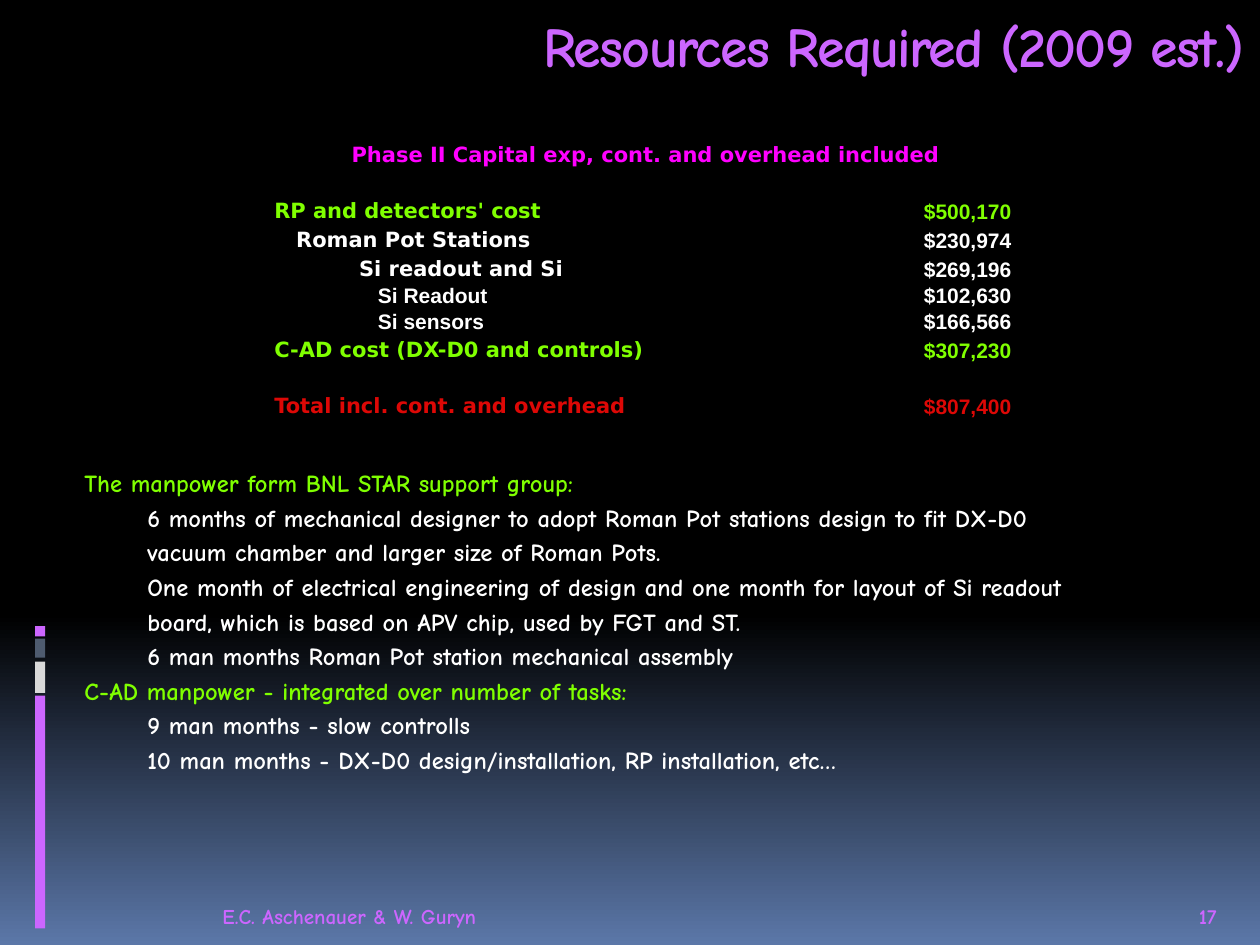
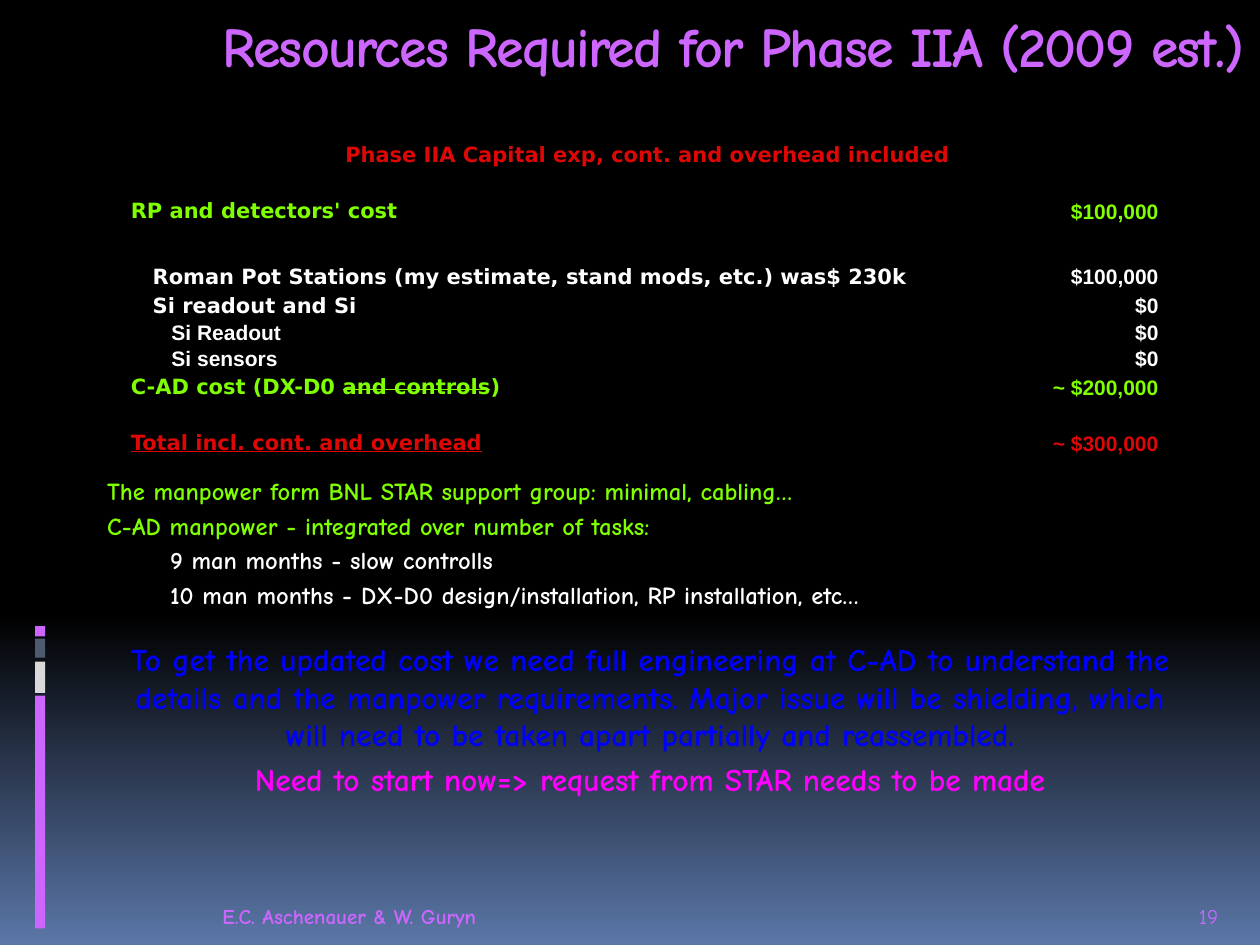
from dataclasses import dataclass
from typing import NamedTuple

from lxml.etree import SubElement
from pptx import Presentation
from pptx.dml.color import RGBColor
from pptx.enum.shapes import MSO_SHAPE
from pptx.enum.text import MSO_ANCHOR, MSO_AUTO_SIZE, PP_ALIGN
from pptx.oxml.ns import qn
from pptx.util import Pt


@dataclass(frozen=True)
class Theme:
    black: str = "000000"
    white: str = "FFFFFF"
    sky: str = "5B77A8"
    violet: str = "CC66FF"
    silver: str = "D9D9D9"
    slate: str = "4E5B6F"
    green: str = "80FF00"
    red: str = "DD0806"
    magenta: str = "FF00FF"
    blue: str = "0000FF"
    text_font: str = "Comic Neue"
    label_font: str = "DejaVu Sans"
    value_font: str = "Arial"
    title_size: float = 32
    message_size: float = 18
    list_size: float = 14
    small_size: float = 12
    paragraph_gap: float = 0.21


class CostRow(NamedTuple):
    label: str
    value: str
    color: str
    inset: float = 0.75
    height: float = 16.5
    font: str = Theme.label_font
    struck: str = ""
    ending: str = ""
    underline: bool = False


THEME = Theme()
NO_GRID_STYLE = "{2D5ABB26-0587-4C30-8999-92F81FD0307C}"
FOOTER = "E.C. Aschenauer & W. Guryn"
HEADER_HEIGHT = 18
THIN_ROW = 15
SPACER = CostRow("", "", THEME.white, height=THIN_ROW)
CONTROL_TASKS = [
    ("C-AD manpower - integrated over number of tasks:", 0),
    ("9 man months - slow controlls", 1),
    ("10 man months - DX-D0 design/installation, RP installation, etc…", 1),
]


def add_span(para, text, *, size, color, font=THEME.text_font, bold=True,
             underline=None, strike=False, spacing=None):
    span = para.add_run()
    span.text = text
    span.font.size = Pt(size)
    span.font.name = font
    span.font.bold = bold
    span.font.underline = underline
    span.font.color.rgb = RGBColor.from_string(color)
    properties = span._r.get_or_add_rPr()
    if strike:
        properties.set("strike", "sngStrike")
    if spacing is not None:
        properties.set("spc", str(spacing))
    return span


class SlideBuilder:
    def __init__(self, deck, theme):
        self.deck = deck
        self.theme = theme
        self.page = None

    def paint_background(self):
        fill = self.deck.slide_master.background.fill
        fill.gradient()
        fill.gradient_angle = 270
        colors = (self.theme.black, self.theme.sky)
        for stop, position, color in zip(fill.gradient_stops, (0.65, 1), colors):
            stop.position = position
            stop.color.rgb = RGBColor.from_string(color)

    def add_page(self, title, title_left, number, number_bold):
        self.page = self.deck.slides.add_slide(self.deck.slide_layouts[1])
        self.add_side_bars()
        self.add_title(title, title_left)
        self.add_footer(FOOTER, 120, 408)
        self.add_footer(number, 678, 36, number_bold)

    def add_side_bars(self):
        theme = self.theme
        bars = (
            (357.8, 5.8, theme.violet),
            (365, 10.8, theme.slate),
            (378, 18, theme.silver),
            (397.5, 133, theme.violet),
        )
        for top, height, color in bars:
            bar = self.page.shapes.add_shape(
                MSO_SHAPE.RECTANGLE, Pt(20), Pt(top), Pt(5.8), Pt(height))
            bar.shadow.inherit = False
            bar.fill.solid()
            bar.fill.fore_color.rgb = RGBColor.from_string(color)
            bar.line.fill.background()

    def prepare_frame(self, box, left, top, width, height, anchor):
        box.left, box.top = Pt(left), Pt(top)
        box.width, box.height = Pt(width), Pt(height)
        frame = box.text_frame
        frame.word_wrap = True
        frame.auto_size = MSO_AUTO_SIZE.NONE
        frame.vertical_anchor = anchor
        return frame

    def add_text_box(self, left, top, width, height, anchor):
        box = self.page.shapes.add_textbox(0, 0, 0, 0)
        return self.prepare_frame(box, left, top, width, height, anchor)

    def add_title(self, text, left):
        frame = self.prepare_frame(
            self.page.shapes.title, left, 2, 718 - left, 48, MSO_ANCHOR.MIDDLE)
        para = frame.paragraphs[0]
        para.alignment = PP_ALIGN.RIGHT
        add_span(para, text, size=self.theme.title_size,
                 color=self.theme.violet, spacing=-100)

    def add_footer(self, text, left, width, bold=True):
        frame = self.add_text_box(left, 505.5, width, 29, MSO_ANCHOR.BOTTOM)
        add_span(frame.paragraphs[0], text, size=self.theme.small_size,
                 color=self.theme.violet, bold=bold)

    def next_paragraph(self, frame, index, size):
        para = frame.add_paragraph() if index else frame.paragraphs[0]
        para.space_before = Pt(size * self.theme.paragraph_gap if index else 0)
        return para

    def add_manpower_list(self, items, left, top, width, height):
        theme = self.theme
        frame = self.prepare_frame(
            self.page.placeholders[1], left, top, width, height, MSO_ANCHOR.TOP)
        for index, (text, level) in enumerate(items):
            para = self.next_paragraph(frame, index, theme.list_size)
            para.level = level
            properties = para._p.get_or_add_pPr()
            properties.set("marL", str(Pt(27 + 36 * level)))
            properties.set("indent", str(Pt(-27)))
            SubElement(properties, qn("a:buNone"))
            add_span(para, text, size=theme.list_size,
                     color=theme.white if level else theme.green)

    def add_message(self, lines, left, top, width, height):
        frame = self.add_text_box(left, top, width, height, MSO_ANCHOR.TOP)
        for index, (text, color) in enumerate(lines):
            para = self.next_paragraph(frame, index, self.theme.message_size)
            para.alignment = PP_ALIGN.CENTER
            add_span(para, text, size=self.theme.message_size, color=color)

    def prepare_cell(self, cell, left=0.75, right=0.75, alignment=PP_ALIGN.LEFT):
        cell.fill.background()
        cell.vertical_anchor = MSO_ANCHOR.BOTTOM
        cell.margin_left, cell.margin_right = Pt(left), Pt(right)
        cell.margin_top, cell.margin_bottom = Pt(0.75), 0
        para = cell.text_frame.paragraphs[0]
        para.alignment = alignment
        ending = SubElement(para._p, qn("a:endParaRPr"))
        ending.set("sz", str(int(self.theme.small_size * 100)))
        return para

    def add_cost_table(self, heading, heading_color, rows, left, widths):
        theme = self.theme
        rows = [CostRow(heading, "", heading_color, height=HEADER_HEIGHT), SPACER, *rows]
        table = self.page.shapes.add_table(
            len(rows), 2, Pt(left), Pt(78), Pt(sum(widths)),
            Pt(sum(row.height for row in rows))).table
        table._tbl.tblPr.find(qn("a:tableStyleId")).text = NO_GRID_STYLE
        table.first_row = table.horz_banding = False
        for column, width in zip(table.columns, widths):
            column.width = Pt(width)
        for index, row in enumerate(rows):
            table.rows[index].height = Pt(row.height)
            label_cell, value_cell = table.cell(index, 0), table.cell(index, 1)
            label = self.prepare_cell(
                label_cell, left=row.inset,
                alignment=PP_ALIGN.LEFT if index else PP_ALIGN.CENTER)
            value = self.prepare_cell(value_cell, right=4, alignment=PP_ALIGN.RIGHT)
            parts = ((row.label, False), (row.struck, True), (row.ending, False))
            for text, strike in parts:
                if text:
                    add_span(label, text, size=theme.small_size, color=row.color,
                             font=row.font, strike=strike,
                             underline=row.underline or None)
            if row.value:
                add_span(value, row.value, size=theme.small_size,
                         color=row.color, font=theme.value_font)
            if index < 2:
                label_cell.merge(value_cell)


def build_full_estimate(builder):
    theme = builder.theme
    builder.add_page("Resources Required (2009 est.)", 106, "17", True)
    rows = [
        CostRow("RP and detectors' cost", "$500,170", theme.green),
        CostRow("Roman Pot Stations", "$230,974", theme.white, 13.25),
        CostRow("Si readout and Si", "$269,196", theme.white, 49.25),
        CostRow("Si Readout", "$102,630", theme.white, 60, THIN_ROW, theme.value_font),
        CostRow("Si sensors", "$166,566", theme.white, 60, THIN_ROW, theme.value_font),
        CostRow("C-AD cost (DX-D0 and controls)", "$307,230", theme.green),
        SPACER,
        CostRow("Total incl. cont. and overhead", "$807,400", theme.red),
    ]
    builder.add_cost_table("Phase II Capital exp, cont. and overhead included",
                           theme.magenta, rows, 156, (320, 106))
    support_tasks = [
        ("The manpower form BNL STAR support group:", 0),
        ("6 months of mechanical designer to adopt Roman Pot stations design to fit DX-D0", 1),
        ("vacuum chamber and larger size of Roman Pots.", 1),
        ("One month of electrical engineering of design and one month for layout of Si readout", 1),
        ("board, which is based on APV chip, used by FGT and ST.", 1),
        ("6 man months Roman Pot station mechanical assembly", 1),
    ]
    builder.add_manpower_list(support_tasks + CONTROL_TASKS, 41, 264, 643, 198)


def build_phase_estimate(builder):
    theme = builder.theme
    builder.add_page("Resources Required for Phase IIA (2009 est.)", 0, "19", False)
    rows = [
        CostRow("RP and detectors' cost", "$100,000", theme.green),
        CostRow("Roman Pot Stations (my estimate, stand mods, etc.) was$ 230k",
                "$100,000", theme.white, 13.25, 37.5),
        CostRow("Si readout and Si", "$0", theme.white, 13.25),
        CostRow("Si Readout", "$0", theme.white, 24, THIN_ROW, theme.value_font),
        CostRow("Si sensors", "$0", theme.white, 24, THIN_ROW, theme.value_font),
        CostRow("C-AD cost (DX-D0 ", "~ $200,000", theme.green,
                struck="and controls", ending=")"),
        SPACER,
        CostRow("Total incl. cont. and overhead", "~ $300,000", theme.red, underline=True),
    ]
    builder.add_cost_table("Phase IIA Capital exp, cont. and overhead included",
                           theme.red, rows, 74, (487, 105))
    support = [("The manpower form BNL STAR support group: minimal, cabling…", 0)]
    builder.add_manpower_list(support + CONTROL_TASKS, 54, 268.5, 612, 85)
    builder.add_message([
        ("To get the updated cost we need full engineering at C-AD to understand the "
         "details and the manpower requirements. Major issue will be shielding, which "
         "will need to be taken apart partially and reassembled.", theme.blue),
        ("Need to start now=> request from STAR needs to be made", theme.magenta),
    ], 65.5, 362, 612, 104)


def main():
    deck = Presentation()
    deck.slide_width, deck.slide_height = Pt(720), Pt(540)
    builder = SlideBuilder(deck, THEME)
    builder.paint_background()
    build_full_estimate(builder)
    build_phase_estimate(builder)
    deck.save("out.pptx")


if __name__ == "__main__":
    main()
